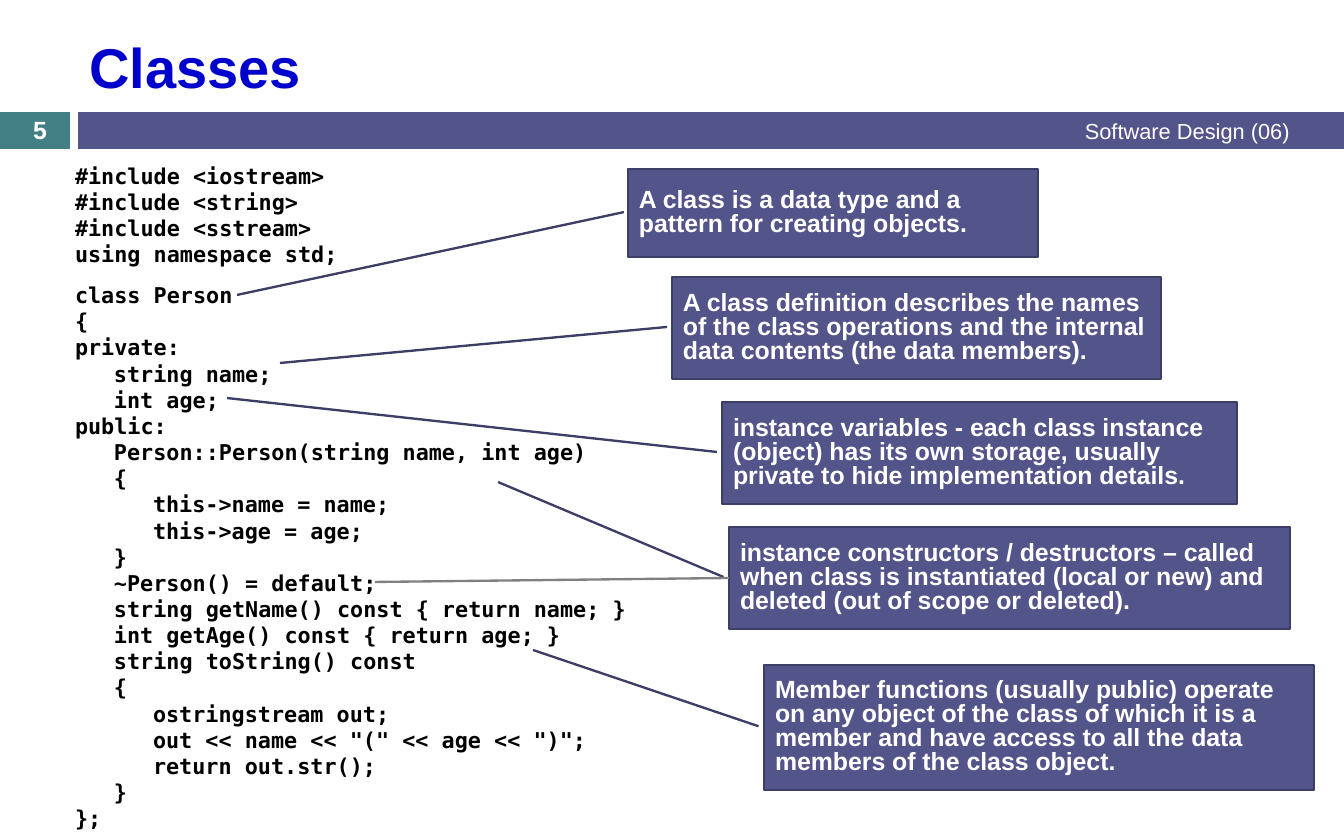
from lxml.etree import SubElement
from pptx import Presentation
from pptx.dml.color import RGBColor
from pptx.enum.shapes import MSO_CONNECTOR, MSO_SHAPE
from pptx.enum.text import MSO_ANCHOR, PP_ALIGN
from pptx.oxml.ns import qn
from pptx.util import Pt

SCALE = 914400 / 112
WHITE = RGBColor(0xFF, 0xFF, 0xFF)
BLACK = RGBColor(0, 0, 0)
BLUE = RGBColor(0, 0, 0xCC)
TEAL = RGBColor(0x43, 0x80, 0x86)
INDIGO = RGBColor(0x53, 0x54, 0x8A)
NAVY = RGBColor(0x3D, 0x3E, 0x66)
GRAY = RGBColor(0x80, 0x80, 0x80)
SANS, MONO = "Arial", "DejaVu Sans Mono"
STEP = 39  # one code indent: three characters

CODE = """#include <iostream>
#include <string>
#include <sstream>
using namespace std;
class Person
{
private:
   string name;
   int age;
public:
   Person::Person(string name, int age)
   {
      this->name = name;
      this->age = age;
   }
   ~Person() = default;
   string getName() const { return name; }
   int getAge() const { return age; }
   string toString() const
   {
      ostringstream out;
      out << name << "(" << age << ")";
      return out.str();
   }
};"""

# box, pointer tip, text
NOTES = [
    ((722, 402, 515, 102), (227, 398),
     "instance variables - each class instance (object) has its own storage, "
     "usually private to hide implementation details."),
    ((672, 277, 489, 102), (280, 363),
     "A class definition describes the names of the class operations and the "
     "internal data contents (the data members)."),
    ((628, 169, 410, 88), (237, 295),
     "A class is a data type and a pattern for creating objects."),
    ((764, 665, 550, 125), (533, 650),
     "Member functions (usually public) operate on any object of the class of "
     "which it is a member and have access to all the data members of the "
     "class object."),
]
MAKERS = ((729, 527, 561, 102), (498, 482),
          "instance constructors / destructors – called when class is "
          "instantiated (local or new) and deleted (out of scope or deleted).")


def px(*nums):
    return [round(n * SCALE) for n in nums]


def style(para, size, color, bold=True, font=SANS, align=PP_ALIGN.LEFT):
    para.alignment = align
    for run in para.runs:
        run.font.name, run.font.size = font, Pt(size)
        run.font.bold, run.font.color.rgb = bold, color


def set_title(slide, box, text):
    title = slide.shapes.title
    title.left, title.top, title.width, title.height = px(*box)
    title.text_frame.text = text
    title.text_frame.vertical_anchor = MSO_ANCHOR.MIDDLE
    style(title.text_frame.paragraphs[0], 36, BLUE)


def add_bar(shapes, box, color):
    bar = shapes.add_shape(MSO_SHAPE.RECTANGLE, *px(*box))
    bar.shadow.inherit = False
    bar.fill.solid()
    bar.fill.fore_color.rgb = color
    bar.line.fill.background()


def add_label(shapes, box, text, size, bold, align):
    frame = shapes.add_textbox(*px(*box)).text_frame
    frame.word_wrap = True
    frame.vertical_anchor = MSO_ANCHOR.MIDDLE
    frame.text = text
    style(frame.paragraphs[0], size, WHITE, bold, align=align)


def add_band(shapes, box, number, course):
    """Draw the strip with the slide number and the course name."""
    x, y, w, h = box
    add_bar(shapes, (x, y, 70, h), TEAL)
    add_bar(shapes, (x + 78, y, w - 78, h), INDIGO)
    add_label(shapes, (x + 691, y, 610, h), course, 14, False, PP_ALIGN.RIGHT)
    add_label(shapes, (x, y + 1, 80, h - 3), number, 16, True, PP_ALIGN.CENTER)


def add_code(shapes, box, code):
    frame = shapes.add_textbox(*px(*box)).text_frame
    frame.word_wrap = True
    lines = code.split("\n")
    frame.text = "\n".join(line.strip() for line in lines)
    for para, line in zip(frame.paragraphs, lines):
        style(para, 14, BLACK, font=MONO)
        level = (len(line) - len(line.lstrip())) // 3
        if level:
            para._p.get_or_add_pPr().set("marL", str(px(level * STEP)[0]))
        if line.startswith("class"):
            para.space_before = Pt(9.5)


def add_note(shapes, box, tip, text):
    """Draw a callout whose pointer runs from its left side to the tip."""
    x, y, w, h = box
    note = shapes.add_shape(MSO_SHAPE.LINE_CALLOUT_1, *px(*box))
    ends = (0.49, -0.01, (tip[1] - y) / h, (tip[0] - x) / w)
    for i, value in enumerate(ends):
        note.adjustments[i] = value
    note.shadow.inherit = False
    note.fill.solid()
    note.fill.fore_color.rgb = INDIGO
    note.line.color.rgb = NAVY
    note.line.width = Pt(1.5)
    frame = note.text_frame
    frame.word_wrap = True
    frame.vertical_anchor = MSO_ANCHOR.MIDDLE
    frame.text = text
    style(frame.paragraphs[0], 16, WHITE)
    frame.paragraphs[0].line_spacing = 0.8


def add_line(shapes, start, end):
    line = shapes.add_connector(MSO_CONNECTOR.STRAIGHT, *px(*start, *end))
    line.line.color.rgb = GRAY
    line.line.width = Pt(1.5)
    SubElement(line._element.spPr, qn("a:effectLst"))


def main():
    deck = Presentation()
    deck.slide_width, deck.slide_height = px(1344, 840)
    slide = deck.slides.add_slide(deck.slide_layouts[5])
    shapes = slide.shapes
    set_title(slide, (78, 21, 1222, 90), "Classes")
    add_band(shapes, (0, 112, 1344, 37), "5", "Software Design (06)")
    add_code(shapes, (64, 157, 597, 683), CODE)
    for note in NOTES:
        add_note(shapes, *note)
    group = shapes.add_group_shape()
    add_note(group.shapes, *MAKERS)
    add_line(group.shapes, (375, 582), (729, 578))
    deck.save("out.pptx")


if __name__ == "__main__":
    main()
